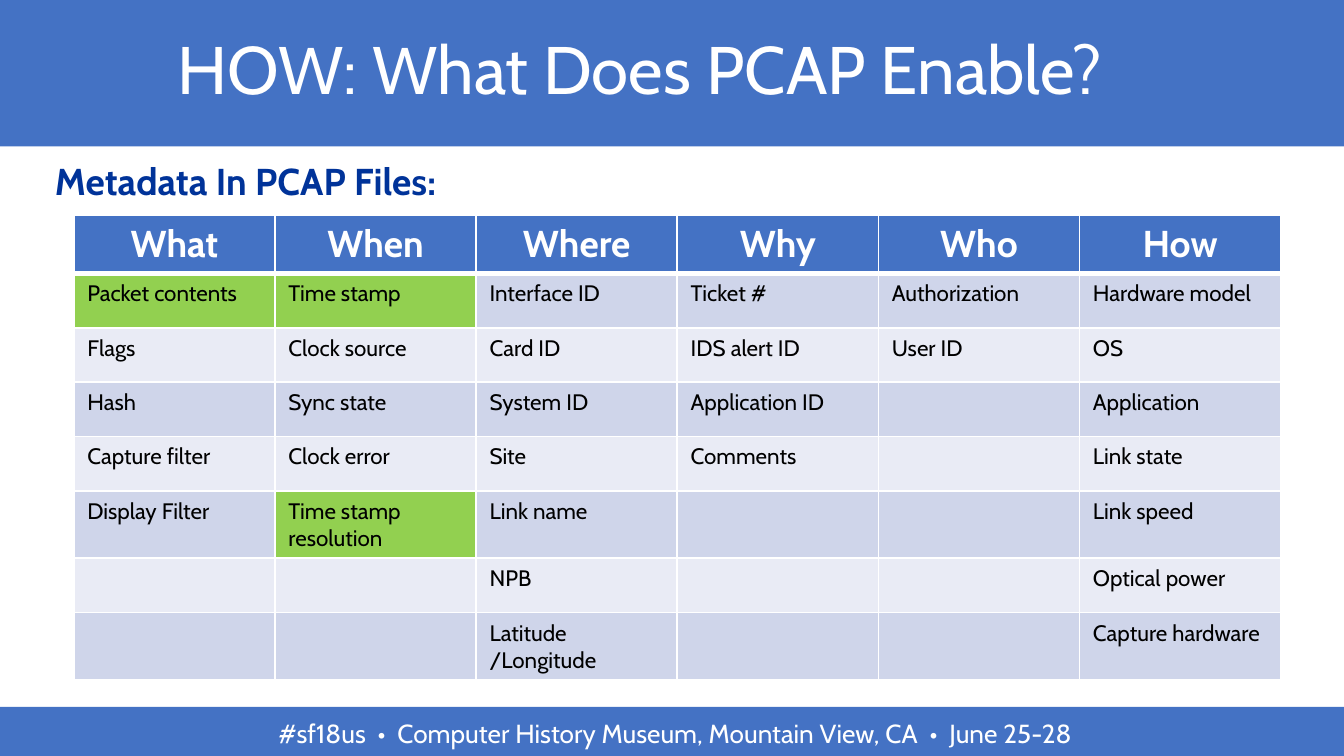
from typing import NamedTuple

from lxml.etree import SubElement
from pptx import Presentation
from pptx.dml.color import RGBColor
from pptx.enum.shapes import MSO_SHAPE
from pptx.enum.text import MSO_ANCHOR, PP_ALIGN
from pptx.oxml.ns import qn
from pptx.util import Inches, Pt

FONT = "Cabin"
BLUE, NAVY, WHITE, BLACK = "4472C4", "003399", "FFFFFF", "000000"
GREEN, BAND_DARK, BAND_LIGHT = "92D050", "CFD5EA", "E9EBF5"


class Box(NamedTuple):
    left: float
    top: float
    width: float
    height: float

    def lengths(self):
        return [Inches(value) for value in self]


class Column(NamedTuple):
    header: str
    entries: list[str]
    highlighted: tuple[str, ...] = ()


HEADER_BAND = Box(0, 0, 10.01, 1.09)
FOOTER_BAND = Box(0, 5.26, 10, 0.39)
TITLE_BOX = Box(1.02, 0.01, 7.48, 1.07)
SUBTITLE_BOX = Box(0.31, 1.13, 9.45, 0.44)
FOOTER_BOX = Box(0.5, 5.29, 9.05, 0.39)
TABLE_BOX = Box(0.55, 1.6, 8.98, 3.24)

COLUMNS = [
    Column("What", ["Packet contents", "Flags", "Hash", "Capture filter", "Display Filter"],
           ("Packet contents",)),
    Column("When", ["Time stamp", "Clock source", "Sync state", "Clock error",
                    "Time stamp resolution"],
           ("Time stamp", "Time stamp resolution")),
    Column("Where", ["Interface ID", "Card ID", "System ID", "Site", "Link name", "NPB",
                     "Latitude /Longitude"]),
    Column("Why", ["Ticket #", "IDS alert ID", "Application ID", "Comments"]),
    Column("Who", ["Authorization", "User ID"]),
    Column("How", ["Hardware model", "OS", "Application", "Link state", "Link speed",
                   "Optical power", "Capture hardware"]),
]


def color(value: str) -> RGBColor:
    return RGBColor.from_string(value)


def write_text(text_frame, text: str, *, size: float, fill: str, bold: bool = False,
               align=PP_ALIGN.LEFT, anchor=MSO_ANCHOR.TOP, line_spacing=None) -> None:
    text_frame.word_wrap = True
    text_frame.vertical_anchor = anchor
    paragraph = text_frame.paragraphs[0]
    paragraph.alignment = align
    if line_spacing:
        paragraph.line_spacing = line_spacing
    run = paragraph.add_run()
    run.text = text
    run.font.name = FONT
    run.font.size = Pt(size)
    run.font.bold = bold
    run.font.color.rgb = color(fill)


def add_band(slide, box: Box) -> None:
    band = slide.shapes.add_shape(MSO_SHAPE.RECTANGLE, *box.lengths())
    band.shadow.inherit = False
    band.fill.solid()
    band.fill.fore_color.rgb = color(BLUE)
    band.line.fill.background()


def add_text(slide, box: Box, text: str, **text_format) -> None:
    text_box = slide.shapes.add_textbox(*box.lengths())
    write_text(text_box.text_frame, text, **text_format)


def add_title(slide, box: Box, text: str) -> None:
    title = slide.shapes.title
    title.left, title.top, title.width, title.height = box.lengths()
    frame = title.text_frame
    frame.margin_left = frame.margin_right = Inches(0.1)
    frame.margin_top = frame.margin_bottom = Inches(0.1)
    write_text(frame, text, size=36, fill=WHITE, align=PP_ALIGN.CENTER,
               anchor=MSO_ANCHOR.MIDDLE, line_spacing=0.9)
    # Bring the title in front of the header band.
    title.element.getparent().append(title.element)


def style_cell(cell, fill: str, top: float = 1, bottom: float = 1) -> None:
    """Give the cell white borders, with widths in points, and a fill."""
    properties = cell._tc.get_or_add_tcPr()
    for tag, width in (("a:lnL", 1), ("a:lnR", 1), ("a:lnT", top), ("a:lnB", bottom)):
        border = SubElement(properties, qn(tag), w=str(Pt(width)))
        SubElement(SubElement(border, qn("a:solidFill")), qn("a:srgbClr"), val=WHITE)
    cell.fill.solid()
    cell.fill.fore_color.rgb = color(fill)


def add_metadata_table(slide, box: Box, columns: list[Column]) -> None:
    row_count = 1 + max(len(column.entries) for column in columns)
    table = slide.shapes.add_table(row_count, len(columns), *box.lengths()).table
    for column_index, column in enumerate(columns):
        header = table.cell(0, column_index)
        style_cell(header, BLUE, bottom=3)
        write_text(header.text_frame, column.header, size=20, fill=WHITE, bold=True,
                   align=PP_ALIGN.CENTER)
        for row in range(1, row_count):
            cell = table.cell(row, column_index)
            entry = column.entries[row - 1] if row <= len(column.entries) else ""
            band = BAND_DARK if row % 2 else BAND_LIGHT
            style_cell(cell, GREEN if entry in column.highlighted else band,
                       top=3 if row == 1 else 1)
            if entry:
                write_text(cell.text_frame, entry, size=12, fill=BLACK)


def main() -> None:
    presentation = Presentation()
    presentation.slide_width = Inches(10)
    presentation.slide_height = presentation.slide_width * 9 // 16
    slide = presentation.slides.add_slide(presentation.slide_layouts[5])

    for band in (HEADER_BAND, FOOTER_BAND):
        add_band(slide, band)
    add_text(slide, FOOTER_BOX,
             "#sf18us  •  Computer History Museum, Mountain View, CA  •  June 25-28",
             size=14, fill=WHITE, align=PP_ALIGN.CENTER)
    add_title(slide, TITLE_BOX, "HOW: What Does PCAP Enable?")
    add_text(slide, SUBTITLE_BOX, "Metadata In PCAP Files:", size=20, fill=NAVY, bold=True)
    add_metadata_table(slide, TABLE_BOX, COLUMNS)

    presentation.save("out.pptx")


if __name__ == "__main__":
    main()
